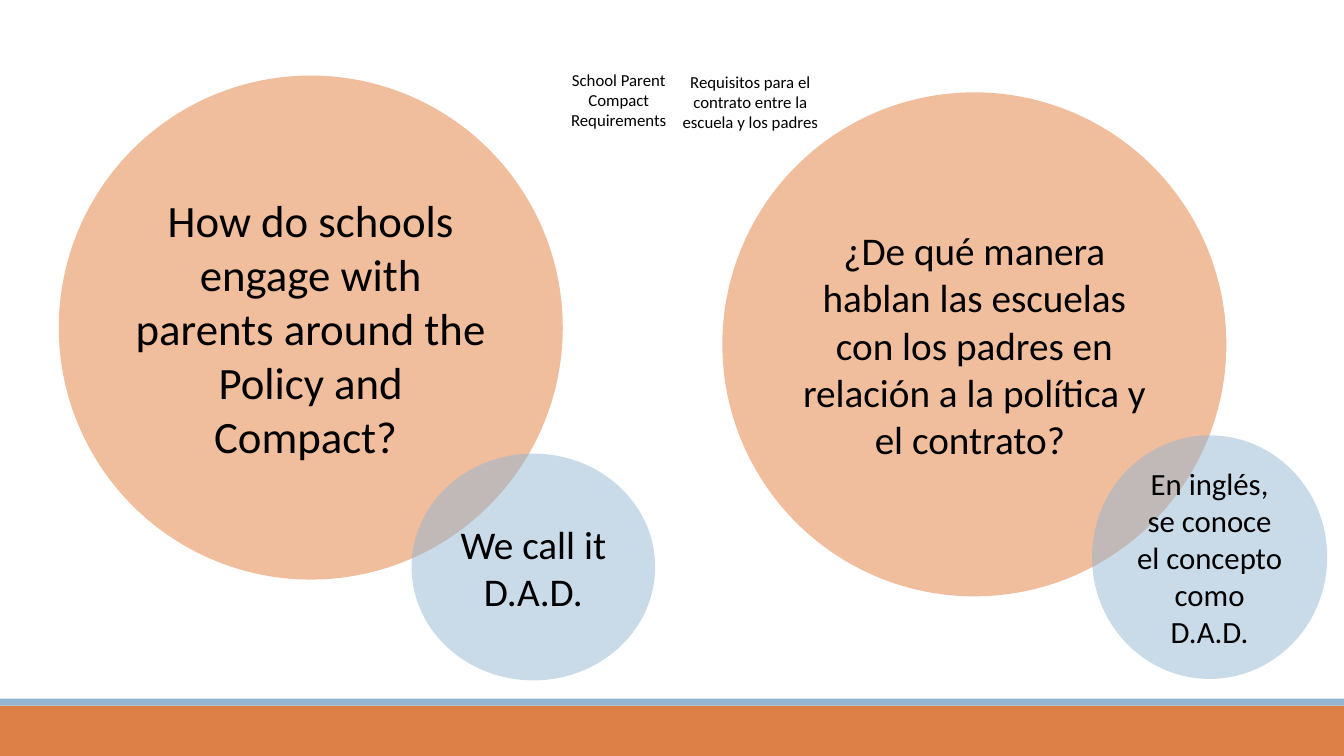
from lxml.etree import SubElement
from pptx import Presentation
from pptx.dml.color import RGBColor
from pptx.enum.shapes import MSO_SHAPE as Shape
from pptx.enum.text import MSO_ANCHOR as Anchor, PP_ALIGN as Align
from pptx.oxml.ns import qn
from pptx.util import Pt

PAGE_WIDTH, PAGE_HEIGHT = 960, 540
ORANGE, PEACH, BLUE, BLACK = "DD8047", "E37C3D", "94B6D2", "000000"


def color(hex_code):
    return RGBColor.from_string(hex_code)


def add_filled(page, kind, box, fill, opacity=100):
    shape = page.shapes.add_shape(kind, *map(Pt, box))
    shape.shadow.inherit = False
    shape.fill.solid()
    shape.fill.fore_color.rgb = color(fill)
    shape.line.fill.background()
    if opacity < 100:
        hue = shape.fill._xPr.find(qn("a:solidFill"))[0]
        SubElement(hue, qn("a:alpha"), val=str(opacity * 1000))
    return shape


def write(shape, text, size, **frame_format):
    frame = shape.text_frame
    for name, value in {"word_wrap": True, **frame_format}.items():
        setattr(frame, name, value)
    para = frame.paragraphs[0]
    para.alignment = Align.CENTER
    span = para.add_run()
    span.text = text
    for name, value in {"name": "Calibri", "size": Pt(size)}.items():
        setattr(span.font, name, value)
    span.font.color.rgb = color(BLACK)


def add_footer(page, left, top, width, height):
    """Orange band with a thin blue stripe along its upper edge."""
    stripe = 5
    add_filled(page, Shape.RECTANGLE, (left, top + stripe, width, height - stripe), ORANGE)
    add_filled(page, Shape.RECTANGLE, (left, top, width, stripe), BLUE)


def add_question(page, left, top, diameter, question, size, answer, answer_size, answer_box):
    """Large circle with a question; answer_box is relative to its corner."""
    circle = add_filled(page, Shape.OVAL, (left, top, diameter, diameter), PEACH, 50)
    margins = {f"margin_{side}": 0 for side in ("left", "top", "right", "bottom")}
    write(circle, question, size, vertical_anchor=Anchor.MIDDLE, **margins)

    dx, dy, width, height = answer_box
    bubble = add_filled(page, Shape.OVAL, (left + dx, top + dy, width, height), BLUE, 50)
    write(bubble, answer, answer_size, vertical_anchor=Anchor.MIDDLE)


def add_heading(page, left, top, width, height, text):
    box = page.shapes.add_textbox(*map(Pt, (left, top, width, height)))
    write(box, text, 12, vertical_anchor=Anchor.TOP)


def main():
    deck = Presentation()
    deck.slide_width, deck.slide_height = Pt(PAGE_WIDTH), Pt(PAGE_HEIGHT)
    page = deck.slides.add_slide(deck.slide_layouts[6])

    add_footer(page, 0, 499, PAGE_WIDTH, 41)
    add_question(page, 42, 54, 360,
                 "How do schools engage with parents around the Policy and Compact? ", 32,
                 "We call it D.A.D.", 28, (252, 270, 174, 162))
    add_question(page, 516, 66, 360,
                 "¿De qué manera hablan las escuelas con los padres en relación a la "
                 "política y el contrato? ", 28,
                 "En inglés, se conoce el concepto como D.A.D.", 22, (264, 245, 168, 174))
    add_heading(page, 391, 46, 102, 51, "School Parent Compact Requirements")
    add_heading(page, 479, 47.5, 114, 51,
                "Requisitos para el contrato entre la escuela y los padres")
    deck.save("out.pptx")


if __name__ == "__main__":
    main()
